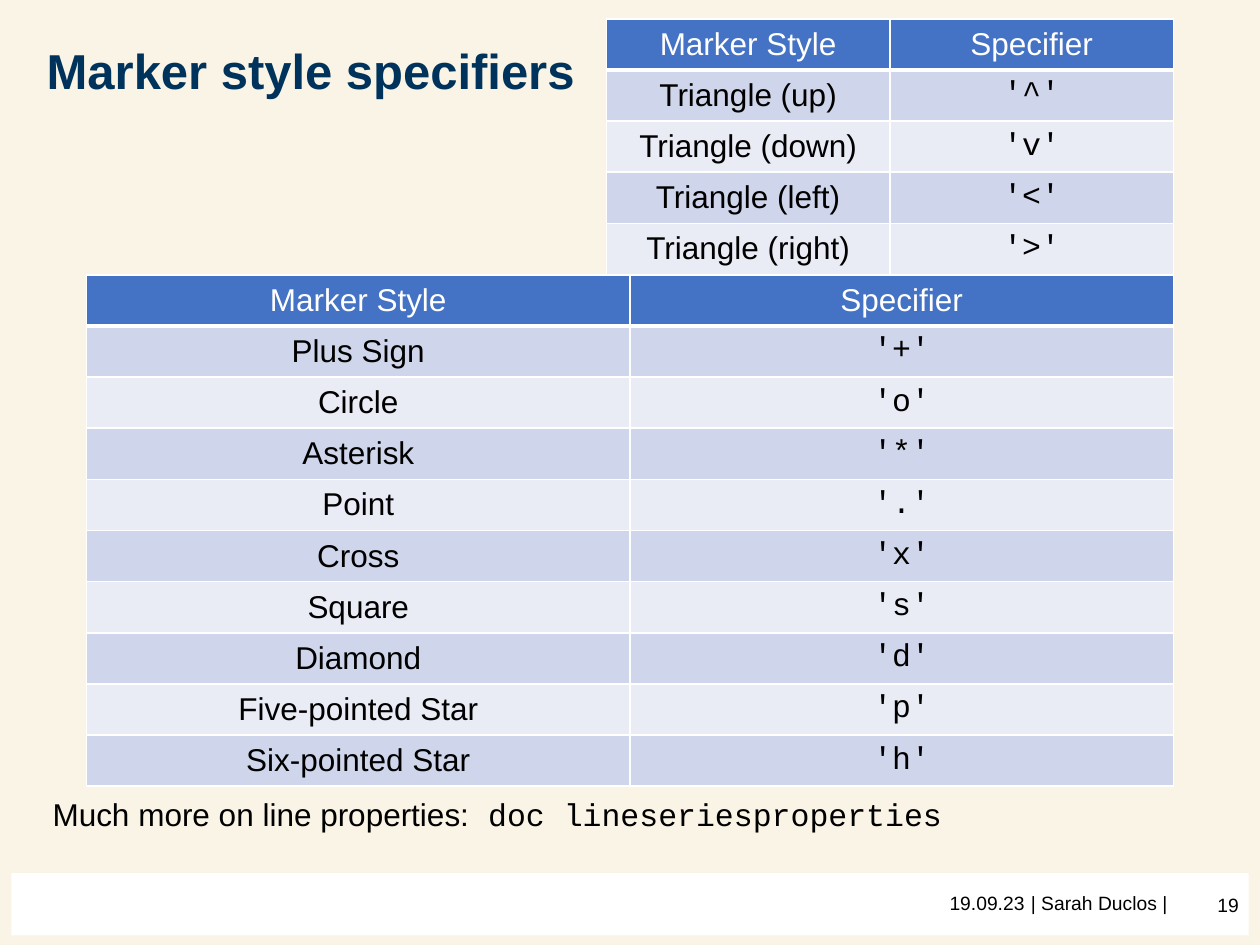
from dataclasses import dataclass

from lxml import etree
from pptx import Presentation
from pptx.dml.color import RGBColor
from pptx.enum import shapes, text
from pptx.oxml import ns
from pptx.util import Pt

SANS, MONO = "Arial", "Courier New"
BLACK, WHITE, NAVY, CREAM = "000000", "FFFFFF", "00335B", "F9F4E5"
HEADER, BANDS = "4472C4", ("CFD5EA", "E9EBF5")
ROW_HEIGHT = 29.25


@dataclass
class MarkerTable:
    left: float
    top: float
    col_width: float
    markers: list[tuple[str, str]]


@dataclass
class Label:
    left: float
    top: float
    width: float
    runs: list[tuple[str, str]]
    size: float = 11
    align: text.PP_ALIGN = text.PP_ALIGN.LEFT
    wrap: bool = True


TABLES = [
    MarkerTable(49.5, 157, 310.5, [
        ("Plus Sign", "+"), ("Circle", "o"), ("Asterisk", "*"),
        ("Point", "."), ("Cross", "x"), ("Square", "s"), ("Diamond", "d"),
        ("Five-pointed Star", "p"), ("Six-pointed Star", "h")]),
    MarkerTable(346.5, 10.75, 162, [
        ("Triangle (up)", "^"), ("Triangle (down)", "v"),
        ("Triangle (left)", "<"), ("Triangle (right)", ">")]),
]

LABELS = [
    Label(535.5, 506, 162, [("19.09.23", SANS)]),
    Label(582, 506, 243, [("| Sarah Duclos |", SANS)]),
    Label(553, 507, 162, [("19", SANS)], align=text.PP_ALIGN.RIGHT),
    Label(23, 451, 526, [("Much more on line properties:", SANS),
                         (" doc lineseriesproperties", MONO)],
          size=18, wrap=False),
]


def rgb(color: str) -> RGBColor:
    return RGBColor.from_string(color)


def set_font(font, name: str, size: float, color: str) -> None:
    font.name, font.size = name, Pt(size)
    font.color.rgb = rgb(color)


def set_borders(cell, bottom: float) -> None:
    tc_pr = cell._tc.get_or_add_tcPr()
    for side, width in (("L", 1), ("R", 1), ("T", 1), ("B", bottom)):
        ln = etree.SubElement(tc_pr, ns.qn(f"a:ln{side}"), w=str(Pt(width)))
        fill = etree.SubElement(ln, ns.qn("a:solidFill"))
        etree.SubElement(fill, ns.qn("a:srgbClr"), val=WHITE)


def add_marker_table(s, spec_table: MarkerTable) -> None:
    t = spec_table
    rows = [("Marker Style", "Specifier")]
    rows += [(name, f"'{code}'") for name, code in t.markers]
    table = s.shapes.add_table(
        len(rows), 2, Pt(t.left), Pt(t.top),
        Pt(2 * t.col_width), Pt(ROW_HEIGHT * len(rows))).table
    for i, row in enumerate(rows):
        table.rows[i].height = Pt(ROW_HEIGHT)
        is_header = i == 0
        for j, value in enumerate(row):
            cell = table.cell(i, j)
            set_borders(cell, 3 if is_header else 1)
            cell.fill.solid()
            cell.fill.fore_color.rgb = rgb(
                HEADER if is_header else BANDS[(i - 1) % 2])
            cell.vertical_anchor = text.MSO_ANCHOR.MIDDLE
            p = cell.text_frame.paragraphs[0]
            p.alignment = text.PP_ALIGN.CENTER
            r = p.add_run()
            r.text = value
            set_font(r.font, MONO if j and not is_header else SANS, 18,
                     WHITE if is_header else BLACK)


def add_label(s, label: Label) -> None:
    sp = s.shapes.add_textbox(Pt(label.left), Pt(label.top),
                              Pt(label.width), Pt(label.size + 14))
    tf = sp.text_frame
    tf.word_wrap = label.wrap
    p = tf.paragraphs[0]
    p.alignment = label.align
    for value, name in label.runs:
        r = p.add_run()
        r.text = value
        set_font(r.font, name, label.size, BLACK)


def main() -> None:
    prs = Presentation()
    prs.slide_width, prs.slide_height = Pt(720), Pt(540)
    s = prs.slides.add_slide(prs.slide_layouts[5])
    s.background.fill.solid()
    s.background.fill.fore_color.rgb = rgb(CREAM)

    # Footer band
    sp = s.shapes.add_shape(shapes.MSO_SHAPE.RECTANGLE,
                            Pt(6.5), Pt(499), Pt(707), Pt(35.5))
    sp.shadow.inherit = False
    sp.fill.solid()
    sp.fill.fore_color.rgb = rgb(WHITE)
    sp.line.fill.background()

    # Title
    title = s.shapes.title
    title.left, title.top = Pt(19.5), Pt(-10)
    title.width, title.height = Pt(620.5), Pt(104)
    tf = title.text_frame
    tf.text = "Marker style specifiers"
    tf.vertical_anchor = text.MSO_ANCHOR.MIDDLE
    p = tf.paragraphs[0]
    p.alignment = text.PP_ALIGN.LEFT
    p.line_spacing = 0.9
    set_font(p.font, SANS, 28, NAVY)
    p.font.bold = True

    # Marker tables, then footer and note text
    for table in TABLES:
        add_marker_table(s, table)
    for label in LABELS:
        add_label(s, label)

    prs.save("out.pptx")


if __name__ == "__main__":
    main()
